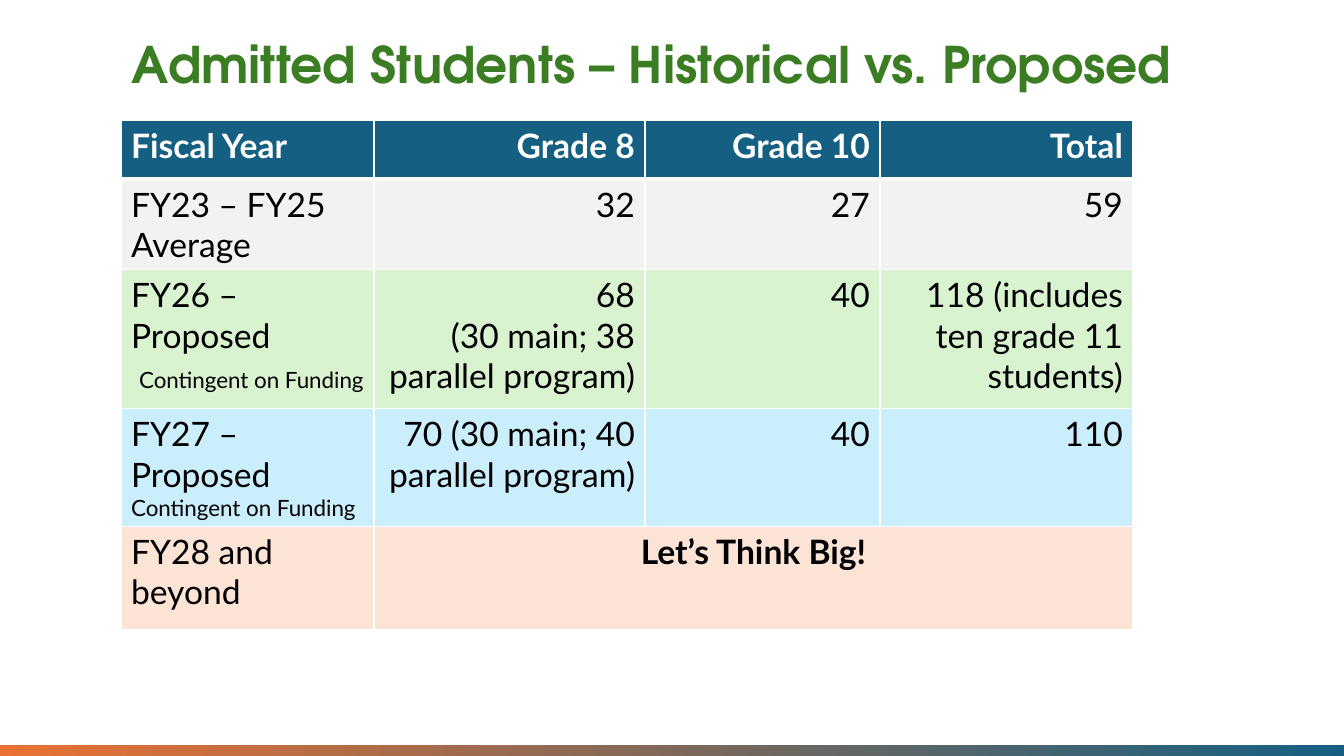
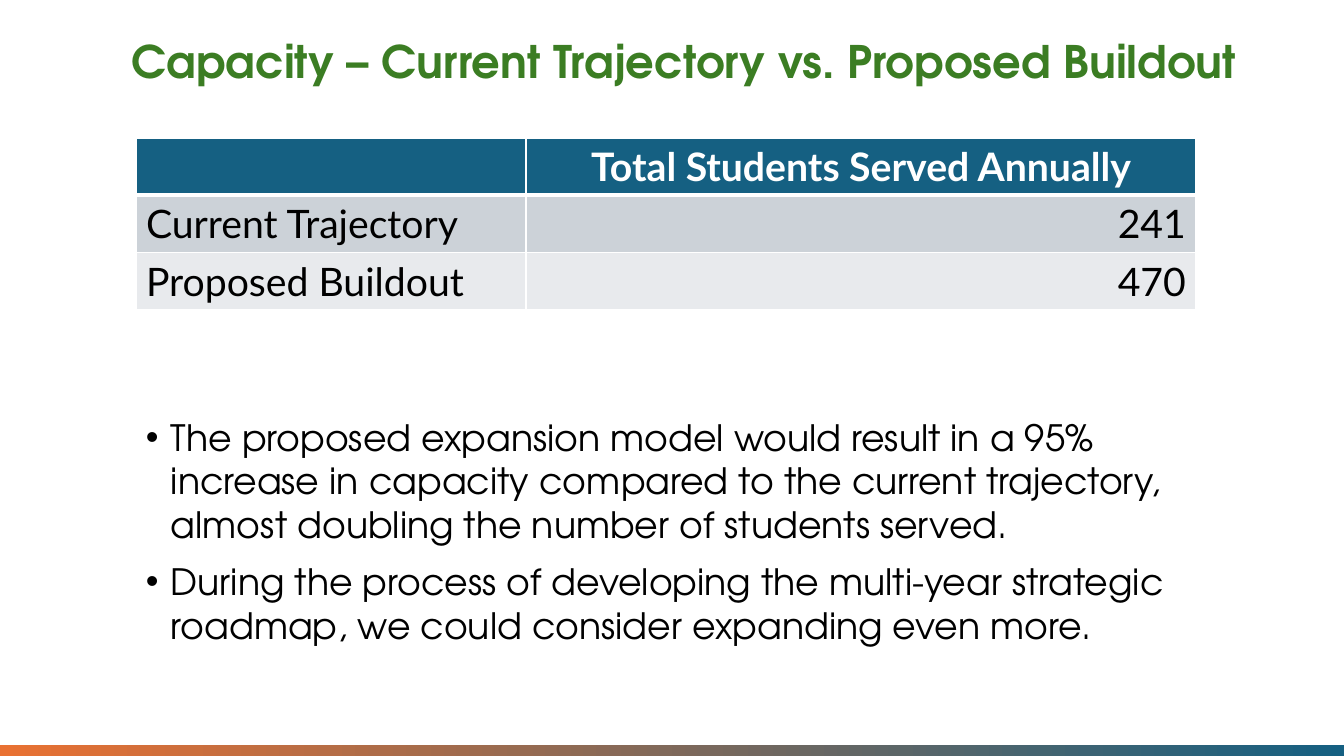
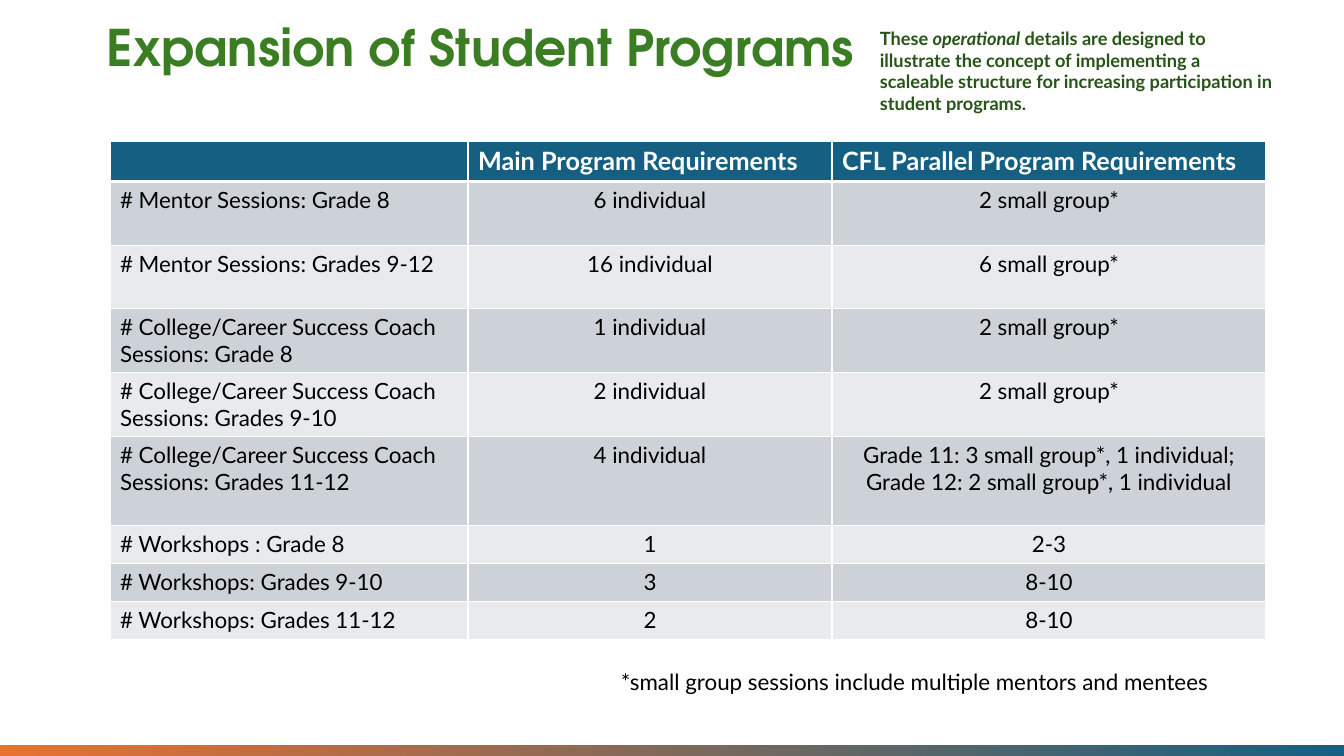
from pptx import Presentation
from pptx.dml.color import RGBColor
from pptx.enum.shapes import MSO_SHAPE
from pptx.enum.text import PP_ALIGN
from pptx.oxml.ns import qn
from pptx.util import Pt
from lxml import etree

LEFT, CENTER, RIGHT = PP_ALIGN.LEFT, PP_ALIGN.CENTER, PP_ALIGN.RIGHT
RECTANGLE = MSO_SHAPE.RECTANGLE

EMU_PER_PX = 914400 / 100.8
SLIDE_W, SLIDE_H = 1344, 756
BAND_H = 11

TITLE_FONT, TEXT_FONT = "TeX Gyre Adventor", "Lato"
WHITE = RGBColor(0xFF, 0xFF, 0xFF)
BLACK = RGBColor(0x00, 0x00, 0x00)
ORANGE = RGBColor(0xE9, 0x71, 0x32)
TEAL = RGBColor(0x15, 0x60, 0x82)
GREEN = RGBColor(0x3B, 0x7D, 0x23)
DARK_GREEN = RGBColor(0x27, 0x54, 0x17)
GREY = RGBColor(0xF2, 0xF2, 0xF2)
PALE_GREEN = RGBColor(0xD9, 0xF2, 0xD0)
PALE_BLUE = RGBColor(0xCA, 0xEE, 0xFB)
PALE_ORANGE = RGBColor(0xFB, 0xE3, 0xD6)
BANDS = [RGBColor(0xCC, 0xD2, 0xD8), RGBColor(0xE8, 0xEA, 0xED)]

ADMITTED = dict(
    at=(121, 120), columns=(253, 271, 235, 253), heights=(59, 90, 139, 117, 103),
    sizes=(24, 24), header_aligns=(LEFT, RIGHT, RIGHT, RIGHT),
    aligns=(LEFT, RIGHT, RIGHT, RIGHT),
    fills=[GREY, PALE_GREEN, PALE_BLUE, PALE_ORANGE],
    rows=[
        ("Fiscal Year", "Grade 8", "Grade 10", "Total"),
        ("FY23 – FY25 Average", "32", "27", "59"),
        ("FY26 – Proposed\nContingent on Funding",
         "68\n(30 main; 38 parallel program)", "40",
         "118 (includes ten grade 11 students)"),
        ("FY27 – Proposed\nContingent on Funding",
         "70 (30 main; 40 parallel program)", "40", "110"),
        ("FY28 and beyond", "Let’s Think Big!", "", ""),
    ])

CAPACITY = dict(
    at=(136, 138), columns=(390, 670), heights=(57, 57, 57),
    sizes=(28, 28), header_aligns=(LEFT, CENTER), aligns=(LEFT, RIGHT), fills=BANDS,
    rows=[
        ("", "Total Students Served Annually"),
        ("Current Trajectory", "241"),
        ("Proposed Buildout", "470"),
    ])
CAPACITY_POINTS = [
    "The proposed expansion model would result in a 95% increase in capacity compared "
    "to the current trajectory, almost doubling the number of students served.",
    "During the process of developing the multi-year strategic roadmap, we could "
    "consider expanding even more.",
]

PROGRAMS = dict(
    at=(110, 141), columns=(358, 364, 434),
    heights=(40, 64, 63, 64, 64, 89, 38, 38, 38),
    sizes=(18, 16), header_aligns=(LEFT, LEFT, LEFT), aligns=(LEFT, CENTER, CENTER),
    fills=BANDS,
    rows=[
        ("", "Main Program Requirements", "CFL Parallel Program Requirements"),
        ("# Mentor Sessions: Grade 8", "6 individual", "2 small group*"),
        ("# Mentor Sessions: Grades 9-12", "16 individual", "6 small group*"),
        ("# College/Career Success Coach Sessions: Grade 8",
         "1 individual", "2 small group*"),
        ("# College/Career Success Coach Sessions: Grades 9-10",
         "2 individual", "2 small group*"),
        ("# College/Career Success Coach Sessions: Grades 11-12", "4 individual",
         "Grade 11: 3 small group*, 1 individual; Grade 12: 2 small group*, 1 individual"),
        ("# Workshops : Grade 8", "1", "2-3"),
        ("# Workshops: Grades 9-10", "3", "8-10"),
        ("# Workshops: Grades 11-12", "2", "8-10"),
    ])
DETAILS_NOTE = [
    [("These ", False), ("operational", True), (" details are designed to", False)],
    [("illustrate the concept of implementing a", False)],
    [("scaleable structure for increasing participation in student programs.", False)],
]
FOOTNOTE = "*small group sessions include multiple mentors and mentees"


def px(length):
    return round(length * EMU_PER_PX)


def style(paragraph, size, color, font=TEXT_FONT, bold=False):
    paragraph.font.name = font
    paragraph.font.size = Pt(size)
    paragraph.font.color.rgb = color
    paragraph.font.bold = bold


def add_text(slide, box, paragraphs):
    """Add a wrapping text box and return its paragraphs; each is a list of (text, italic)."""
    frame = slide.shapes.add_textbox(*map(px, box)).text_frame
    frame.word_wrap = True
    for i, runs in enumerate(paragraphs):
        paragraph = frame.add_paragraph() if i else frame.paragraphs[0]
        for text, italic in runs:
            run = paragraph.add_run()
            run.text = text
            if italic:
                run.font.italic = True
    return frame.paragraphs


def indent(paragraph, left, first=0):
    properties = paragraph._p.get_or_add_pPr()
    properties.set("marL", str(px(left)))
    properties.set("indent", str(px(first)))
    return properties


def add_bullet(paragraph, hang):
    properties = indent(paragraph, hang, -hang)
    etree.SubElement(properties, qn("a:buFont")).set("typeface", "Arial")
    etree.SubElement(properties, qn("a:buChar")).set("char", "•")


def add_slide(prs, title, at, width, size):
    """Add a slide with its title and the bottom gradient band."""
    slide = prs.slides.add_slide(prs.slide_layouts[6])
    band = slide.shapes.add_shape(
        RECTANGLE, 0, px(SLIDE_H - BAND_H), px(SLIDE_W), px(BAND_H))
    band.shadow.inherit = False
    band.line.fill.background()
    band.fill.gradient()
    band.fill.gradient_angle = 0
    for stop, color, position in zip(band.fill.gradient_stops, (ORANGE, TEAL), (0, 1)):
        stop.color.rgb = color
        stop.position = position
    heading = add_text(slide, (*at, width, 81), [[(title, False)]])[0]
    heading.line_spacing = 0.9
    style(heading, size, GREEN, TITLE_FONT, True)
    return slide


def set_borders(cell, top, bottom):
    """Draw white borders; top and bottom widths are in points, the sides 1 pt."""
    properties = cell._tc.get_or_add_tcPr()
    for side, width in (("L", 1), ("R", 1), ("T", top), ("B", bottom)):
        line = etree.SubElement(properties, qn(f"a:ln{side}"), w=str(Pt(width)))
        fill = etree.SubElement(line, qn("a:solidFill"))
        etree.SubElement(fill, qn("a:srgbClr"), val=str(WHITE))


def add_table(slide, data):
    rows, columns, heights = data["rows"], data["columns"], data["heights"]
    box = (*data["at"], sum(columns), sum(heights))
    table = slide.shapes.add_table(len(rows), len(columns), *map(px, box)).table
    table.horz_banding = False
    for column, width in zip(table.columns, columns):
        column.width = px(width)
    header_size, body_size = data["sizes"]
    for r, (texts, height) in enumerate(zip(rows, heights)):
        table.rows[r].height = px(height)
        header = r == 0
        aligns = data["header_aligns"] if header else data["aligns"]
        color = TEAL if header else data["fills"][(r - 1) % len(data["fills"])]
        for c, (text, align) in enumerate(zip(texts, aligns)):
            cell = table.cell(r, c)
            set_borders(cell, 3 if r == 1 else 1, 3 if header else 1)
            cell.fill.solid()
            cell.fill.fore_color.rgb = color
            cell.text = text
            for paragraph in cell.text_frame.paragraphs:
                paragraph.alignment = align
                style(paragraph, header_size if header else body_size,
                      WHITE if header else BLACK, bold=header)
    return table


def build_admitted(prs):
    slide = add_slide(prs, "Admitted Students – Historical vs. Proposed",
                      (122, 35), 1100, 36)
    table = add_table(slide, ADMITTED)
    funding_notes = [table.cell(r, 0).text_frame.paragraphs[1] for r in (2, 3)]
    for note in funding_notes:
        note.font.size = Pt(16)
    indent(funding_notes[0], 8)
    funding_notes[0].space_before = Pt(8)
    goal = table.cell(4, 1)
    goal.merge(table.cell(4, 3))
    goal.text_frame.paragraphs[0].alignment = CENTER
    goal.text_frame.paragraphs[0].font.bold = True


def build_capacity(prs):
    slide = add_slide(prs, "Capacity – Current Trajectory vs. Proposed Buildout",
                      (122, 35), 1158, 32)
    add_table(slide, CAPACITY)
    points = add_text(slide, (136, 410, 1114, 250),
                      [[(text, False)] for text in CAPACITY_POINTS])
    for i, point in enumerate(points):
        if i:
            point.space_before = Pt(10)
        add_bullet(point, 25)
        style(point, 25.9, BLACK, TITLE_FONT)


def build_programs(prs):
    slide = add_slide(prs, "Expansion of Student Programs", (97, 18), 1100, 36)
    add_table(slide, PROGRAMS)
    for paragraph in add_text(slide, (870, 22, 466, 99), DETAILS_NOTE):
        style(paragraph, 13, DARK_GREEN, bold=True)
    footnote = add_text(slide, (611, 663, 617, 37), [[(FOOTNOTE, False)]])[0]
    style(footnote, 16, BLACK)


def main():
    prs = Presentation()
    prs.slide_width, prs.slide_height = px(SLIDE_W), px(SLIDE_H)
    build_admitted(prs)
    build_capacity(prs)
    build_programs(prs)
    prs.save("out.pptx")


if __name__ == "__main__":
    main()
